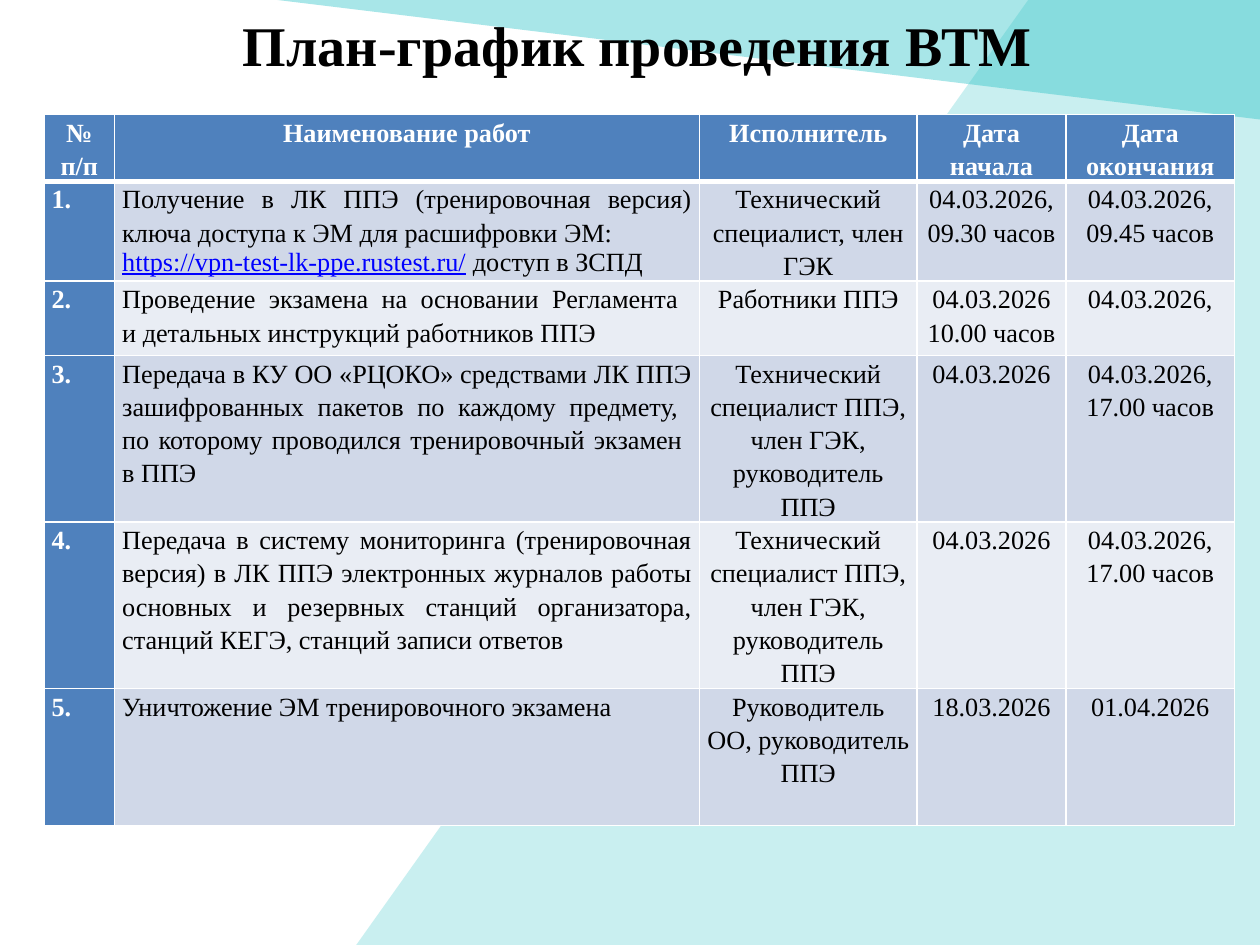
from copy import deepcopy

from lxml.etree import SubElement
from pptx import Presentation
from pptx.dml.color import RGBColor
from pptx.enum.text import MSO_ANCHOR, MSO_AUTO_SIZE, PP_ALIGN
from pptx.oxml.ns import qn
from pptx.util import Inches, Pt

FONT = "Times New Roman"
COLORS = {
    "teal": "20C0C4", "header": "4F81BD", "odd": "D0D8E8", "even": "E9EDF4",
    "white": "FFFFFF", "black": "000000", "link": "0000FF",
}

# Content: a cell is a list of paragraphs, a tuple paragraph is (address, rest)
TITLE = "План-график проведения ВТМ"
HEADERS = ["№ п/п", "Наименование работ", "Исполнитель", "Дата начала", "Дата окончания"]
PPE_TEAM = "Технический специалист ППЭ, член ГЭК, руководитель ППЭ"
WORKS = [
    (["Получение в ЛК ППЭ (тренировочная версия) ключа доступа к ЭМ для расшифровки ЭМ:",
      ("https://vpn-test-lk-ppe.rustest.ru/", " доступ в ЗСПД")],
     ["Технический специалист, член ГЭК"],
     ["04.03.2026,", "09.30 часов"], ["04.03.2026,", "09.45 часов"]),
    (["Проведение экзамена на основании Регламента \nи детальных инструкций работников ППЭ"],
     ["Работники ППЭ"], ["04.03.2026", "10.00 часов"], ["04.03.2026,"]),
    (["Передача в КУ ОО «РЦОКО» средствами ЛК ППЭ зашифрованных пакетов по каждому предмету, "
      "\nпо которому проводился тренировочный экзамен \nв ППЭ"],
     [PPE_TEAM], ["04.03.2026"], ["04.03.2026,", "17.00 часов"]),
    (["Передача в систему мониторинга (тренировочная версия) в ЛК ППЭ электронных журналов "
      "работы основных и резервных станций организатора, станций КЕГЭ, станций записи ответов"],
     [PPE_TEAM], ["04.03.2026"], ["04.03.2026,", "17.00 часов"]),
    (["Уничтожение ЭМ тренировочного экзамена"],
     ["Руководитель ОО, руководитель ППЭ"], ["18.03.2026"], ["01.04.2026"]),
]
COLUMN_WIDTHS = [0.56, 4.64, 1.73, 1.18, 1.34]
ROW_HEIGHTS = [0.48, 0.71, 0.59, 0.98, 1.17, 1.09]
# Background bands: opacity in percent, corner points
BANDS = [
    (24, [(10.01, 0), (8.16, 0), (2.82, 7.51), (10.01, 7.51)]),
    (39, [(2.2, 0), (10.01, 0.95), (10.01, -0.01), (2.2, -0.01)]),
]


def rgb(name):
    return RGBColor.from_string(COLORS[name])


def format_run(run, color, size=15, **values):
    for name, value in {"name": FONT, "size": Pt(size), **values}.items():
        setattr(run.font, name, value)
    run.font.color.rgb = rgb(color)


def add_band(slide, position, opacity, points):
    corners = [(Inches(x), Inches(y)) for x, y in points]
    builder = slide.shapes.build_freeform(*corners[0])
    builder.add_line_segments(corners[1:], close=True)
    band = builder.convert_to_shape()
    band.shadow.inherit = False
    band.fill.solid()
    band.fill.fore_color.rgb = rgb("teal")
    color = band.fill._xPr.find(qn("a:solidFill"))[0]
    SubElement(color, qn("a:alpha"), val=str(opacity * 1000))
    band.line.fill.background()
    slide.shapes._spTree.insert(2 + position, band._element)  # behind the title


def write_paragraph(paragraph, content, color, bold, align):
    if isinstance(content, tuple):
        address, rest = content
        for text, shade, underline in [(address, "link", True), (rest, "black", False)]:
            run = paragraph.add_run()
            run.text = text
            format_run(run, shade, bold=False, underline=underline)
        return
    paragraph.text = content
    paragraph.alignment = align
    paragraph.line_spacing = 1.15
    for run in paragraph.runs:
        format_run(run, color, bold=bold)
    # Line breaks take the size of the text around them
    for line_break in paragraph._p.findall(qn("a:br")):
        line_break.append(deepcopy(paragraph.runs[0]._r.rPr))


def style_cell(cell, fill, border_widths):
    margins = {"margin_left": 0.06, "margin_top": 0, "margin_right": 0.06, "margin_bottom": 0}
    for name, value in margins.items():
        setattr(cell, name, Inches(value))
    properties = cell._tc.get_or_add_tcPr()
    for side, width in border_widths.items():
        line = SubElement(properties, qn(f"a:ln{side}"), w=str(Pt(width)))
        SubElement(SubElement(line, qn("a:solidFill")), qn("a:srgbClr"), val=COLORS["white"])
    cell.fill.solid()
    cell.fill.fore_color.rgb = rgb(fill)


def add_schedule(slide):
    rows = [[[header] for header in HEADERS]]
    rows += [[[f"{number}."], *work] for number, work in enumerate(WORKS, 1)]
    frame = slide.shapes.add_table(
        len(rows), len(HEADERS), Inches(0.35), Inches(0.91),
        Inches(sum(COLUMN_WIDTHS)), Inches(sum(ROW_HEIGHTS)))
    schedule = frame.table
    schedule.first_row = schedule.horz_banding = False
    for column, width in zip(schedule.columns, COLUMN_WIDTHS):
        column.width = Inches(width)
    for row, height in zip(schedule.rows, ROW_HEIGHTS):
        row.height = Inches(height)

    for r, row in enumerate(rows):
        borders = {"L": 1, "R": 1, "T": 3 if r == 1 else 1, "B": 3 if r == 0 else 1}
        for c, paragraphs in enumerate(row):
            cell = schedule.cell(r, c)
            heading = r == 0 or c == 0
            fill = "header" if heading else "odd" if r % 2 else "even"
            style_cell(cell, fill, borders)
            align = PP_ALIGN.JUSTIFY if r and c < 2 else PP_ALIGN.CENTER
            for i, content in enumerate(paragraphs):
                text_frame = cell.text_frame
                paragraph = text_frame.add_paragraph() if i else text_frame.paragraphs[0]
                write_paragraph(paragraph, content, "white" if heading else "black",
                                heading, align)


def main():
    presentation = Presentation()
    presentation.slide_width, presentation.slide_height = Inches(10), Inches(7.5)
    slide = presentation.slides.add_slide(presentation.slide_layouts[5])

    # Background
    for position, (opacity, points) in enumerate(BANDS):
        add_band(slide, position, opacity, points)

    # Title
    title = slide.shapes.title
    place = {"left": 0.16, "top": 0.1, "width": 9.8, "height": 0.5}
    for name, value in place.items():
        setattr(title, name, Inches(value))
    title.text_frame.text = TITLE
    title.text_frame.auto_size = MSO_AUTO_SIZE.NONE
    title.text_frame.vertical_anchor = MSO_ANCHOR.MIDDLE
    heading = title.text_frame.paragraphs[0]
    heading.alignment = PP_ALIGN.CENTER
    format_run(heading.runs[0], "black", size=32, bold=True)

    # Schedule table
    add_schedule(slide)
    presentation.save("out.pptx")


if __name__ == "__main__":
    main()
